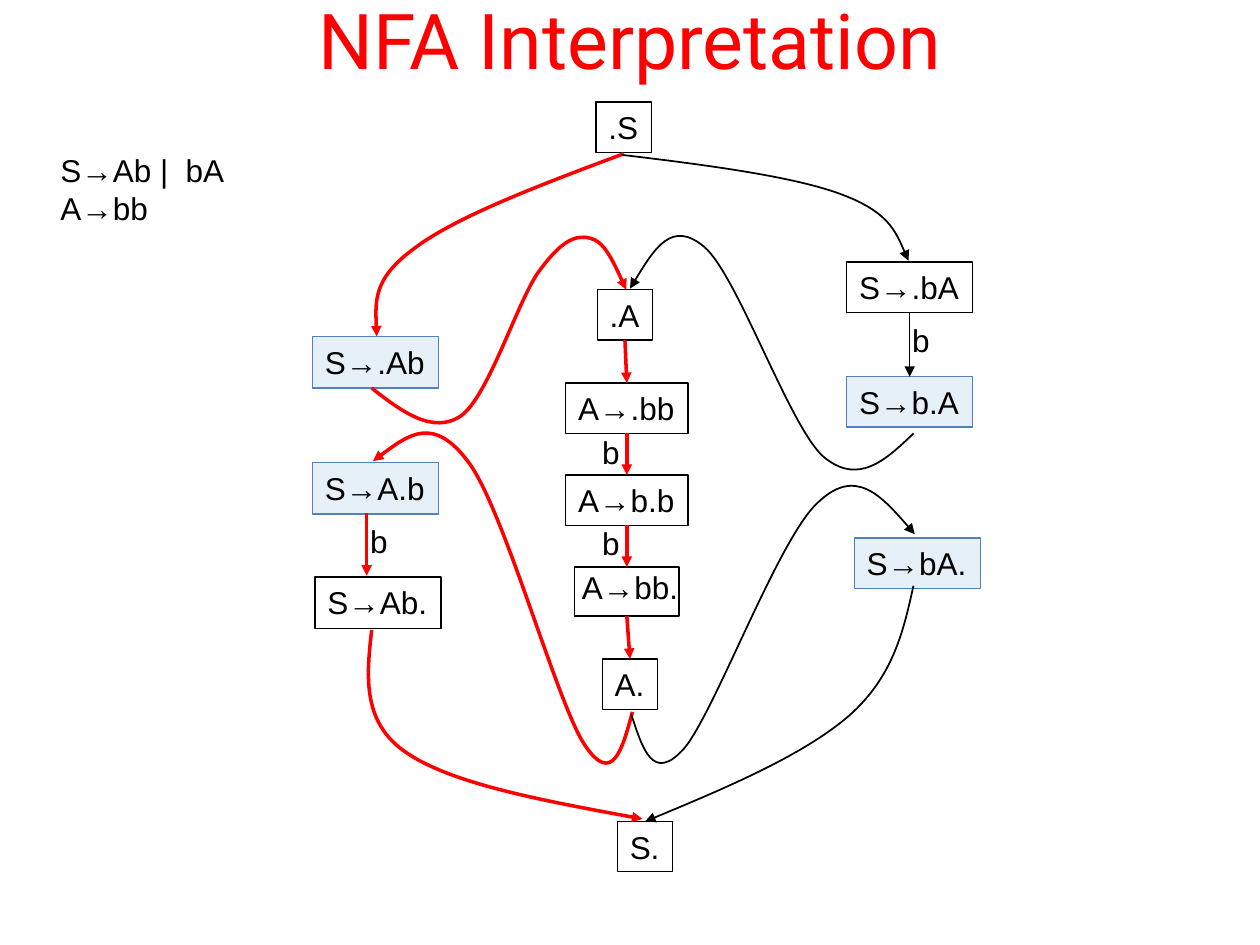
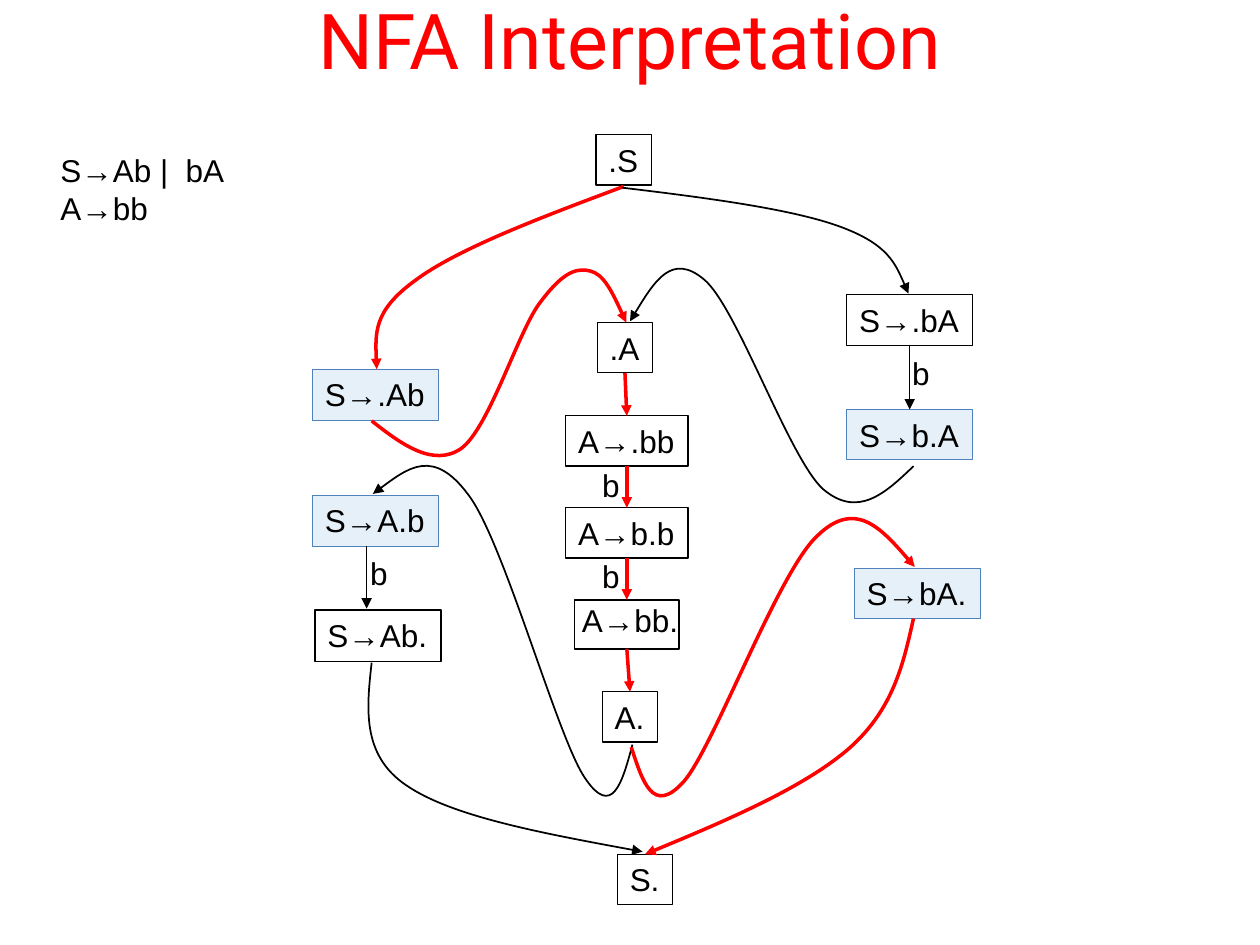
import dataclasses

import pptx
import pptx.dml.color
import pptx.enum.shapes
import pptx.enum.text
import pptx.oxml.xmlchemy
import pptx.util


@dataclasses.dataclass(frozen=True)
class Theme:
    ink = pptx.dml.color.RGBColor.from_string("000000")
    route = pptx.dml.color.RGBColor.from_string("FF0000")
    tint = pptx.dml.color.RGBColor.from_string("0070C0")
    tint_alpha = "10000"
    tint_edge = pptx.dml.color.RGBColor.from_string("4F81BD")
    title_font = "Roboto"
    body_font = "Arial"
    title_size = pptx.util.Pt(44)
    body_size = pptx.util.Pt(18)
    thin = pptx.util.Pt(0.75)
    medium = pptx.util.Pt(1)
    thick = pptx.util.Pt(2)


theme = Theme()
prs = pptx.Presentation()
prs.slide_width = pptx.util.Inches(10)
prs.slide_height = pptx.util.Inches(7.5)
COL = prs.slide_width // 100
ROW = prs.slide_height // 75
STEP = 7.3

STATES = {
    ".S": (47.3, 8.1, 4.4, 4, False),
    "S.": (49, 65.2, 4.4, 4, False),
    ".A": (47.4, 23, 4.4, 4, False),
    "A→.bb": (44.9, 30.4, 9.7, 4, False),
    "A→b.b": (44.9, 30.4 + STEP, 9.7, 4, False),
    "S→.Ab": (24.8, 26.7, 10, 4.1, True),
    "S→A.b": (24.8, 36.7, 10, 4.1, True),
    "S→Ab.": (25, 45.8, 10, 4.1, False),
    "S→.bA": (67.2, 20.8, 10, 4, False),
    "S→b.A": (67.2, 29.9, 10, 4, True),
    "S→bA.": (67.8, 42.7, 10, 4, True),
    "A.": (47.8, 52.3, 4.4, 4, False),
}
B_LABELS = [(46.8, 33.9), (46.8, 41.1), (28.4, 40.9), (71.4, 25)]
CHAIN = [".A", "A→.bb", "A→b.b", "A→bb.", "A."]
JOINS = [(a, b, "shared") for a, b in zip(CHAIN, CHAIN[1:])]
JOINS.append(("S→.bA", "S→b.A", "idle"))

CURVES = [
    ("shared", [(29.5, 30.8), (31.9, 32.7), (34.4, 34.5), (36.6, 33),
                (38.8, 31.4), (41.1, 23.8), (42.8, 21.5),
                (44.5, 19.2), (45.6, 18.6), (46.8, 18.9),
                (47.9, 19.1), (48.8, 21), (49.7, 23)]),
    ("idle", [(72.5, 34.4), (70.3, 36.5), (68.1, 38.6), (65.3, 36.2),
              (62.6, 33.7), (58.5, 21.8), (55.9, 19.6),
              (53.3, 17.4), (51.7, 20.1), (50, 22.9)]),
    ("left", [(50.2, 56.5), (49.4, 59.5), (48.6, 62.4), (46.4, 59.1),
              (44.2, 55.8), (40, 40.4), (37.2, 36.7),
              (34.4, 32.9), (32, 34.8), (29.6, 36.6)]),
    ("shared", [(49.5, 12.2), (42.8, 14.7), (36.2, 17.2), (32.9, 19.7),
                (29.6, 22.1), (29.8, 24.4), (29.9, 26.7)]),
    ("idle", [(49.4, 12.3), (56.1, 13.1), (62.9, 14), (66.7, 15.4),
              (70.5, 16.8), (71.3, 18.8), (72.1, 20.7)]),
    ("right", [(50.1, 56.7), (51, 59.4), (51.8, 62.2), (54.3, 59.4),
               (56.7, 56.6), (61.8, 42.7), (64.9, 39.9),
               (67.9, 37), (70.3, 39.7), (72.6, 42.4)]),
    ("right", [(72.5, 46.5), (71.7, 50.1), (70.9, 53.7), (67.4, 56.8),
               (63.8, 59.9), (57.5, 62.6), (51.2, 65.2)]),
    ("left", [(29.5, 50), (29.1, 53.6), (28.7, 57.3), (32.2, 59.7),
              (35.8, 62.2), (43.4, 63.6), (51, 65)]),
]


def add_text(s, lines, col, row, width, height):
    sp = s.shapes.add_textbox(
        int(col * COL), int(row * ROW), int(width * COL), int(height * ROW))
    tf = sp.text_frame
    tf.word_wrap = False
    tf.auto_size = pptx.enum.text.MSO_AUTO_SIZE.SHAPE_TO_FIT_TEXT
    for i, line in enumerate(lines):
        p = tf.paragraphs[0] if i == 0 else tf.add_paragraph()
        r = p.add_run()
        r.text = line
        r.font.name = theme.body_font
        r.font.size = theme.body_size
        r.font.color.rgb = theme.ink
    return sp


def style_arrow(sp, on_route, idle_width):
    sp.line.color.rgb = theme.route if on_route else theme.ink
    sp.line.width = theme.thick if on_route else idle_width
    ln = sp._element.xpath("./p:spPr/a:ln")[0]
    tail = pptx.oxml.xmlchemy.OxmlElement("a:tailEnd")
    tail.set("type", "triangle")
    ln.append(tail)
    ln.addnext(pptx.oxml.xmlchemy.OxmlElement("a:effectLst"))


for branch, drop, accept_drop in [("left", 0, 0), ("right", 2.6, 2.4)]:
    s = prs.slides.add_slide(prs.slide_layouts[5])
    route = {"shared", branch}

    title = s.shapes.title
    title.left, title.top = 5 * COL, int(-3.2 * ROW)
    title.width, title.height = 90 * COL, int(12.5 * ROW)
    tf = title.text_frame
    tf.auto_size = pptx.enum.text.MSO_AUTO_SIZE.NONE
    tf.vertical_anchor = pptx.enum.text.MSO_ANCHOR.MIDDLE
    p = tf.paragraphs[0]
    p.alignment = pptx.enum.text.PP_ALIGN.CENTER
    r = p.add_run()
    r.text = "NFA Interpretation"
    r.font.name = theme.title_font
    r.font.size = theme.title_size
    r.font.color.rgb = theme.route

    add_text(s, ["S→Ab |  bA", "A→bb"], 3.8, 11.5, 15.1, 7.1)

    boxes = {}
    for name, (col, row, width, height, tinted) in STATES.items():
        shift = accept_drop if name == "S→bA." else drop
        sp = add_text(s, [name], col, row + shift, width, height)
        sp.line.color.rgb = theme.tint_edge if tinted else theme.ink
        sp.line.width = theme.thin
        if tinted:
            sp.fill.solid()
            sp.fill.fore_color.rgb = theme.tint
            alpha = pptx.oxml.xmlchemy.OxmlElement("a:alpha")
            alpha.set("val", theme.tint_alpha)
            sp._element.xpath("./p:spPr/a:solidFill/a:srgbClr")[0].append(alpha)
        boxes[name] = sp

    for col, row in B_LABELS:
        add_text(s, ["b"], col, row + drop, 3.4, 4)

    add_text(s, ["A→bb."], 45.2, 44.6 + drop, 9.7, 4)
    frame = s.shapes.add_shape(
        pptx.enum.shapes.MSO_SHAPE.RECTANGLE,
        int(45.6 * COL), int((45 + drop) * ROW), int(8.3 * COL), int(3.9 * ROW))
    frame.shadow.inherit = False
    frame.fill.background()
    frame.line.color.rgb = theme.ink
    frame.line.width = theme.medium
    boxes["A→bb."] = frame

    for start, end, group in JOINS:
        sp = s.shapes.add_connector(
            pptx.enum.shapes.MSO_CONNECTOR.STRAIGHT, 0, 0, 0, 0)
        sp.begin_connect(boxes[start], 2)
        sp.end_connect(boxes[end], 0)
        style_arrow(sp, group in route, theme.thin)

    sp = s.shapes.add_connector(
        pptx.enum.shapes.MSO_CONNECTOR.STRAIGHT,
        int(29.1 * COL), int((40.7 + drop) * ROW),
        int(29.1 * COL), int((45.7 + drop) * ROW))
    style_arrow(sp, "left" in route, theme.thin)

    for group, points in CURVES:
        points = [(x * COL, (y + drop) * ROW) for x, y in points]
        fb = s.shapes.build_freeform(*points[0])
        fb.add_line_segments(points[1:], close=False)
        sp = fb.convert_to_shape()
        sp.fill.background()
        style_arrow(sp, group in route, theme.medium)
        segments = sp._element.xpath(".//a:lnTo")
        for i in range(0, len(segments), 3):
            bezier = pptx.oxml.xmlchemy.OxmlElement("a:cubicBezTo")
            segments[i].addprevious(bezier)
            for segment in segments[i:i + 3]:
                bezier.append(segment[0])
                segment.getparent().remove(segment)

prs.save("out.pptx")
